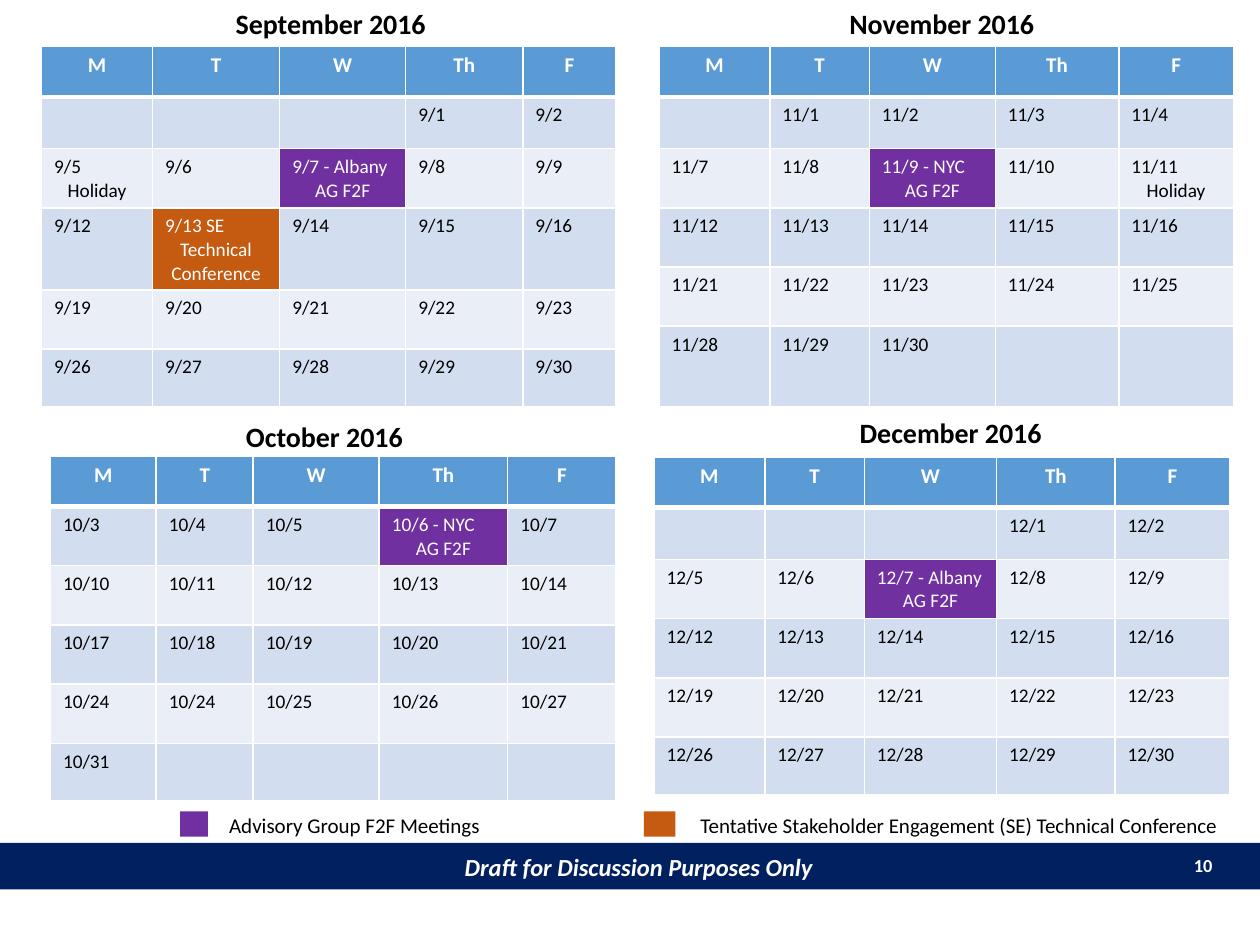
from lxml import etree
from pptx import Presentation
from pptx.dml.color import RGBColor
from pptx.enum import shapes, text
from pptx.oxml import ns
from pptx.util import Inches, Pt

WEEKDAYS = ["M", "T", "W", "Th", "F"]
WHITE, BLACK, NAVY = "FFFFFF", "000000", "002060"
HEADER, BANDS = "5B9BD5", ("D2DEEF", "EAEFF7")
EVENT_FILLS = {"AG F2F": "7030A0", "Technical": "C55A11"}
LEFT, CENTER, RIGHT = (text.PP_ALIGN.LEFT, text.PP_ALIGN.CENTER, text.PP_ALIGN.RIGHT)

MONTHS = [
    {
        "title": "September 2016", "title_at": (0.38, 0), "grid_at": (0.33, 0.37),
        "columns": [0.88, 1.01, 1, 0.93, 0.74],
        "rows": [0.4, 0.41, 0.47, 0.65, 0.47, 0.46],
        "weeks": [
            ["", "", "", "9/1", "9/2"],
            ["9/5\nHoliday", "9/6", "9/7 - Albany\nAG F2F", "9/8", "9/9"],
            ["9/12", "9/13 SE\nTechnical Conference", "9/14", "9/15", "9/16"],
            ["9/19", "9/20", "9/21", "9/22", "9/23"],
            ["9/26", "9/27", "9/28", "9/29", "9/30"],
        ],
    },
    {
        "title": "October 2016", "title_at": (0.33, 3.28), "grid_at": (0.4, 3.62),
        "columns": [0.84, 0.77, 1, 1.02, 0.86],
        "rows": [0.4, 0.47, 0.47, 0.47, 0.47, 0.46],
        "weeks": [
            ["10/3", "10/4", "10/5", "10/6 - NYC\nAG F2F", "10/7"],
            ["10/10", "10/11", "10/12", "10/13", "10/14"],
            ["10/17", "10/18", "10/19", "10/20", "10/21"],
            ["10/24", "10/24", "10/25", "10/26", "10/27"],
            ["10/31", "", "", "", ""],
        ],
    },
    {
        "title": "November 2016", "title_at": (5.23, 0), "grid_at": (5.23, 0.37),
        "columns": [0.88, 0.79, 1, 0.98, 0.91],
        "rows": [0.4, 0.41, 0.47, 0.47, 0.47, 0.64],
        "weeks": [
            ["", "11/1", "11/2", "11/3", "11/4"],
            ["11/7", "11/8", "11/9 - NYC\nAG F2F", "11/10", "11/11\nHoliday"],
            ["11/12", "11/13", "11/14", "11/15", "11/16"],
            ["11/21", "11/22", "11/23", "11/24", "11/25"],
            ["11/28", "11/29", "11/30", "", ""],
        ],
    },
    {
        "title": "December 2016", "title_at": (5.3, 3.25), "grid_at": (5.19, 3.63),
        "columns": [0.88, 0.79, 1.05, 0.94, 0.91],
        "rows": [0.4, 0.41, 0.47, 0.47, 0.47, 0.46],
        "weeks": [
            ["", "", "", "12/1", "12/2"],
            ["12/5", "12/6", "12/7 - Albany\nAG F2F", "12/8", "12/9"],
            ["12/12", "12/13", "12/14", "12/15", "12/16"],
            ["12/19", "12/20", "12/21", "12/22", "12/23"],
            ["12/26", "12/27", "12/28", "12/29", "12/30"],
        ],
    },
]

LEGEND = [
    ("Advisory Group F2F Meetings", "AG F2F", (1.43, 6.44, 0.22, 0.2), (1.72, 6.4, 2.99, 0.3)),
    ("Tentative Stakeholder Engagement (SE) Technical Conference", "Technical",
     (5.11, 6.44, 0.25, 0.2), (5.46, 6.4, 4.54, 0.3)),
]


def paint(fill, color):
    fill.solid()
    fill.fore_color.rgb = RGBColor.from_string(color)


def write(paragraph, words, color, align=LEFT, **style):
    paragraph.alignment = align
    run = paragraph.add_run()
    run.text = words
    run.font.color.rgb = RGBColor.from_string(color)
    for name, value in {"name": "Calibri", **style}.items():
        setattr(run.font, name, value)


def add_label(slide, place, words, color, align=LEFT, **style):
    label = slide.shapes.add_textbox(*map(Inches, place))
    label.text_frame.word_wrap = True
    label.text_frame.auto_size = text.MSO_AUTO_SIZE.SHAPE_TO_FIT_TEXT
    write(label.text_frame.paragraphs[0], words, color, align, **style)


def add_block(slide, place, color):
    block = slide.shapes.add_shape(shapes.MSO_SHAPE.RECTANGLE, *map(Inches, place))
    block.shadow.inherit = False
    block.line.fill.background()
    paint(block.fill, color)
    return block


def add_borders(cell, widths):
    properties = cell._tc.get_or_add_tcPr()
    for index, (side, width) in enumerate(widths.items()):
        line = etree.Element(ns.qn(f"a:ln{side}"), w=str(Pt(width)))
        solid = etree.SubElement(line, ns.qn("a:solidFill"))
        etree.SubElement(solid, ns.qn("a:srgbClr"), val=WHITE)
        properties.insert(index, line)


def fill_cell(cell, entry, row):
    is_header = row == 0
    event = next((color for key, color in EVENT_FILLS.items() if key in entry), None)
    paint(cell.fill, HEADER if is_header else event or BANDS[(row - 1) % 2])
    add_borders(cell, {"L": 1, "R": 1, "T": 3 if row == 1 else 1, "B": 3 if is_header else 1})
    frame = cell.text_frame
    if not entry:
        frame.paragraphs[0].font.size = Pt(11)
        return
    for index, words in enumerate(entry.split("\n")):
        paragraph = frame.add_paragraph() if index else frame.paragraphs[0]
        write(paragraph, words, WHITE if is_header or event else BLACK,
              CENTER if is_header or index else LEFT,
              size=Pt(12 if is_header else 11), bold=is_header)


def add_month(slide, month):
    add_label(slide, (*month["title_at"], 4.49, 0.37), month["title"], BLACK, CENTER,
              size=Pt(16), bold=True)
    widths, heights = month["columns"], month["rows"]
    place = (*month["grid_at"], sum(widths), sum(heights))
    grid = slide.shapes.add_table(len(heights), len(widths), *map(Inches, place)).table
    for column, width in zip(grid.columns, widths):
        column.width = Inches(width)
    for row, height in zip(grid.rows, heights):
        row.height = Inches(height)
    for row, week in enumerate([WEEKDAYS, *month["weeks"]]):
        for column, entry in enumerate(week):
            fill_cell(grid.cell(row, column), entry, row)


def main():
    deck = Presentation()
    deck.slide_width, deck.slide_height = Inches(10), Inches(7.5)
    slide = deck.slides.add_slide(deck.slide_layouts[6])

    footer = add_block(slide, (0, 6.69, 10, 0.37), NAVY).text_frame
    footer.margin_left = Inches(0.24)
    footer.vertical_anchor = text.MSO_ANCHOR.MIDDLE
    write(footer.paragraphs[0], "Draft for Discussion Purposes Only", WHITE, CENTER,
          size=Pt(14), bold=True, italic=True)
    add_label(slide, (9.31, 6.73, 0.41, 0.29), "10", WHITE, RIGHT, size=Pt(10.5), bold=True)

    for month in MONTHS:
        add_month(slide, month)
    for words, event, swatch_place, label_place in LEGEND:
        add_block(slide, swatch_place, EVENT_FILLS[event])
        add_label(slide, label_place, words, BLACK, size=Pt(12))

    deck.save("out.pptx")


if __name__ == "__main__":
    main()
